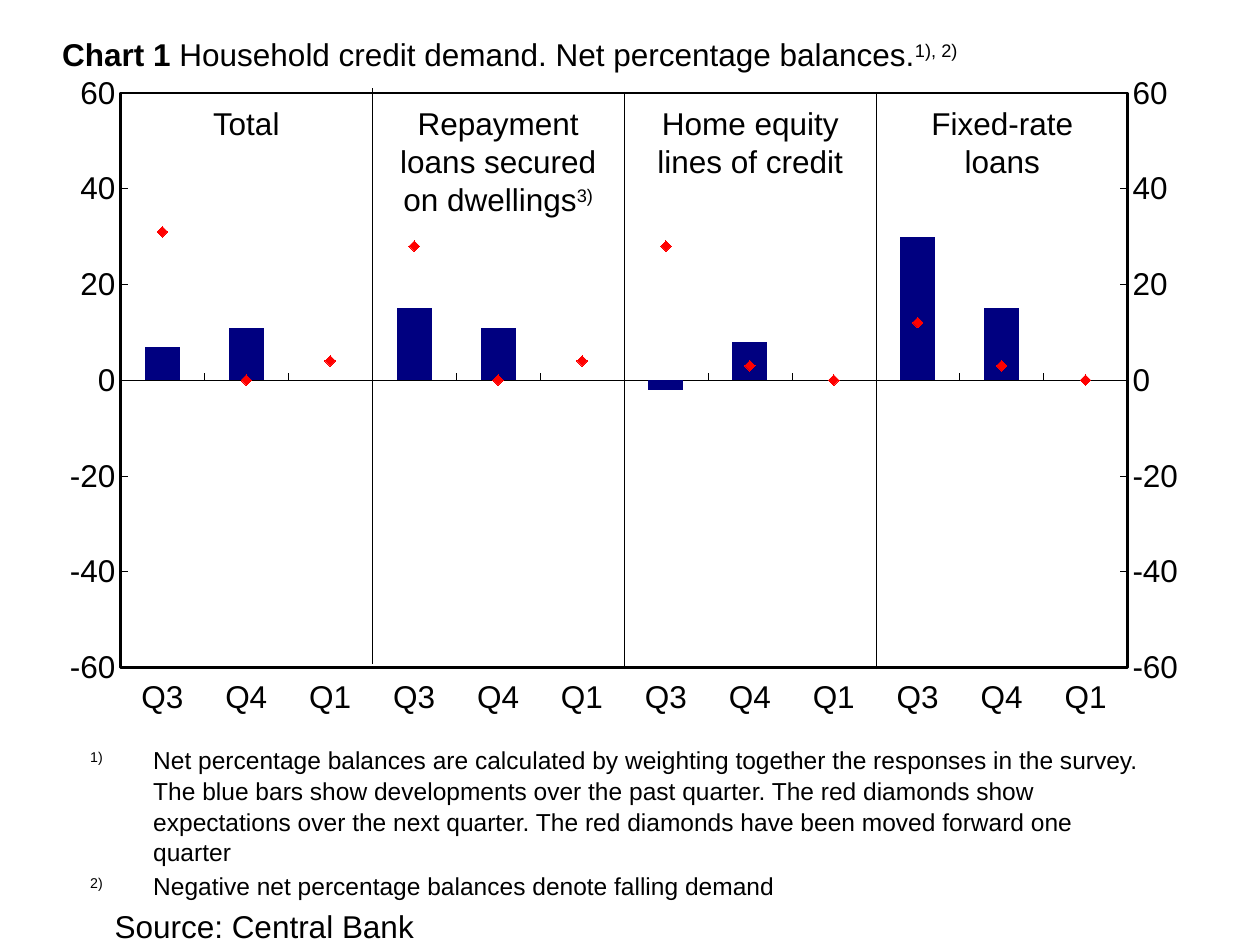
from copy import deepcopy
from pptx import Presentation
from pptx.chart.data import CategoryChartData
from pptx.dml.color import RGBColor
from pptx.enum.chart import XL_CHART_TYPE as Kind, XL_MARKER_STYLE as Mark
from pptx.enum.chart import XL_TICK_LABEL_POSITION as Place, XL_TICK_MARK as Tick
from pptx.enum.shapes import MSO_CONNECTOR as Link
from pptx.enum.text import MSO_ANCHOR as Anchor, MSO_AUTO_SIZE as Fit, PP_ALIGN as Align
from pptx.oxml import parse_xml
from pptx.oxml.ns import nsdecls, qn
from pptx.util import Cm, Pt

BLACK, NAVY, RED = "000000", "000080", "FF0000"
FONT = "Arial"
TITLE = [("Chart 1 ", "b"), ("Household credit demand. Net percentage balances.", ""),
         ("1), 2)", "sup")]
GROUPS = [
    ([("Total", "")], (7, 11, None), (31, 0, 4)),
    ([("Repayment loans secured on dwellings", ""), ("3)", "sup")],
     (15, 11, None), (28, 0, 4)),
    ([("Home equity lines of credit", "")], (-2, 8, None), (28, 3, 0)),
    ([("Fixed-rate loans", "")], (30, 15, None), (12, 3, 0)),
]
TERMS = ["Q3", "Q4", "Q1"]
NOTES = [
    [("1)\t", "sup"),
     ("Net percentage balances are calculated by weighting together the responses in the "
      "survey. The blue bars show developments over the past quarter. The red diamonds show "
      "expectations over the next quarter. The red diamonds have been moved forward one "
      "quarter", "")],
    [("2)\t", "sup"), ("Negative net percentage balances denote falling demand", "")],
]
SOURCE = [("Source: Central Bank", "")]
CUTS = [(1.78, 13.39), (1.9, 13.49), (1.9, 13.49)]
LEFT, STEP = 2.43, 5.08
LAYOUT = {"x": 0.077, "y": 0.034, "w": 0.846, "h": 0.827}


def color(code):
    return RGBColor.from_string(code)


def ink(line, width):
    line.color.rgb = color(BLACK)
    line.width = Pt(width)


def write(para, parts, size=18):
    for text, style in parts:
        run = para.add_run()
        run.text = text
        font = run.font
        font.name, font.size, font.bold = FONT, Pt(size), style == "b"
        font.color.rgb = color(BLACK)
        if style == "sup":
            run._r.get_or_add_rPr().set("baseline", "30000")


def box(slide, x, y, w, h):
    frame = slide.shapes.add_textbox(Cm(x), Cm(y), Cm(w), Cm(h)).text_frame
    frame.word_wrap = True
    return frame


def spread(vals, spot):
    row = [None] * len(TERMS) * len(GROUPS)
    start = spot * len(TERMS)
    row[start:start + len(TERMS)] = vals
    return row


def add_chart(slide):
    data = CategoryChartData()
    data.categories = TERMS * len(GROUPS)
    rows = [spread(g[k], i) for k in (1, 2) for i, g in enumerate(GROUPS)]
    for num, row in enumerate(rows, 1):
        data.add_series(f"Series {num}", row)
    chart = slide.shapes.add_chart(Kind.COLUMN_CLUSTERED, Cm(0.58), Cm(1.4),
                                   Cm(24), Cm(14), data).chart
    chart.has_legend = chart.has_title = False
    chart.font.name, chart.font.size = FONT, Pt(18)
    chart.font.color.rgb = color(BLACK)
    cat, val = chart.category_axis, chart.value_axis
    for axis in (cat, val):
        axis.has_major_gridlines = False
        axis.major_tick_mark, axis.minor_tick_mark = Tick.INSIDE, Tick.NONE
        ink(axis.format.line, 0.25)
    cat.tick_label_position = Place.LOW
    val.minimum_scale, val.maximum_scale, val.major_unit = -60, 60, 20
    add_right(chart, cat._element, val._element)

    bars, dots = chart.plots
    bars.gap_width, bars.overlap, bars.vary_by_categories = 140, 100, False
    for ser in bars.series:
        ser.invert_if_negative = False
        ser.format.fill.solid()
        ser.format.fill.fore_color.rgb = color(NAVY)
    for ser in dots.series:
        ser.smooth = False
        ser.format.line.fill.background()
        ser.marker.style, ser.marker.size = Mark.DIAMOND, 6
        look = ser.marker.format
        look.fill.solid()
        look.fill.fore_color.rgb = look.line.color.rgb = color(RED)


def drop(parent, tag):
    for old in parent.findall(qn(tag)):
        parent.remove(old)


def add_right(chart, cat, val):
    area = cat.getparent()
    bars = area.find(qn("c:barChart"))
    ids = ["9001", "9002"]
    dots = parse_xml(
        f'<c:lineChart {nsdecls("c")}><c:grouping val="standard"/><c:varyColors val="0"/>'
        f'<c:marker val="1"/><c:axId val="{ids[0]}"/><c:axId val="{ids[1]}"/></c:lineChart>')
    for ser in bars.findall(qn("c:ser"))[len(GROUPS):]:
        drop(ser, "c:invertIfNegative")
        dots.insert(len(dots) - 3, ser)
    bars.addnext(dots)

    side, base = deepcopy(val), deepcopy(cat)
    for axis, own, other in ((base, *ids), (side, *ids[::-1])):
        axis.find(qn("c:axId")).set("val", own)
        axis.find(qn("c:crossAx")).set("val", other)
    base.find(qn("c:delete")).set("val", "1")
    side.find(qn("c:axPos")).set("val", "r")
    side.find(qn("c:crosses")).set("val", "max")
    val.addnext(side)
    side.addnext(base)
    base.addnext(parse_xml(
        f'<c:spPr {nsdecls("c", "a")}><a:noFill/><a:ln w="19050"><a:solidFill>'
        f'<a:srgbClr val="{BLACK}"/></a:solidFill></a:ln></c:spPr>'))
    drop(area, "c:layout")
    sizes = "".join(f'<c:{k} val="{v}"/>' for k, v in LAYOUT.items())
    area.insert(0, parse_xml(
        f'<c:layout {nsdecls("c")}><c:manualLayout><c:layoutTarget val="inner"/>'
        f'<c:xMode val="edge"/><c:yMode val="edge"/>{sizes}</c:manualLayout></c:layout>'))


def main():
    deck = Presentation()
    deck.slide_width, deck.slide_height = Cm(25.4), Cm(19.05)
    slide = deck.slides.add_slide(deck.slide_layouts[5])
    title = slide.shapes.title
    title.left, title.top, title.width, title.height = Cm(1), Cm(0.4), Cm(22.63), Cm(1.2)
    frame = title.text_frame
    frame.auto_size, frame.vertical_anchor = Fit.NONE, Anchor.BOTTOM
    frame.paragraphs[0].alignment = Align.LEFT
    write(frame.paragraphs[0], TITLE)

    add_chart(slide)
    for i, (head, _, _) in enumerate(GROUPS):
        para = box(slide, LEFT + STEP * i + 0.06, 1.98, 4.95, 1.02).paragraphs[0]
        para.alignment = Align.CENTER
        write(para, head)
    for i, (top, end) in enumerate(CUTS, 1):
        x = Cm(LEFT + STEP * i)
        cut = slide.shapes.add_connector(Link.STRAIGHT, x, Cm(end), x, Cm(top))
        ink(cut.line, 0.75)
        cut._element.spPr.append(parse_xml(f'<a:effectLst {nsdecls("a")}/>'))

    frame = box(slide, 1.57, 14.88, 21.64, 3.4)
    for i, note in enumerate(NOTES):
        para = frame.add_paragraph() if i else frame.paragraphs[0]
        para.line_spacing = 1.04
        para.space_before = Pt(2 * i)
        props = para._p.get_or_add_pPr()
        props.set("marL", str(Cm(1.27)))
        props.set("indent", str(-Cm(1.27)))
        write(para, note, 14)
    write(box(slide, 2.06, 18.16, 15.09, 1.07).paragraphs[0], SOURCE)
    deck.save("out.pptx")


if __name__ == "__main__":
    main()
